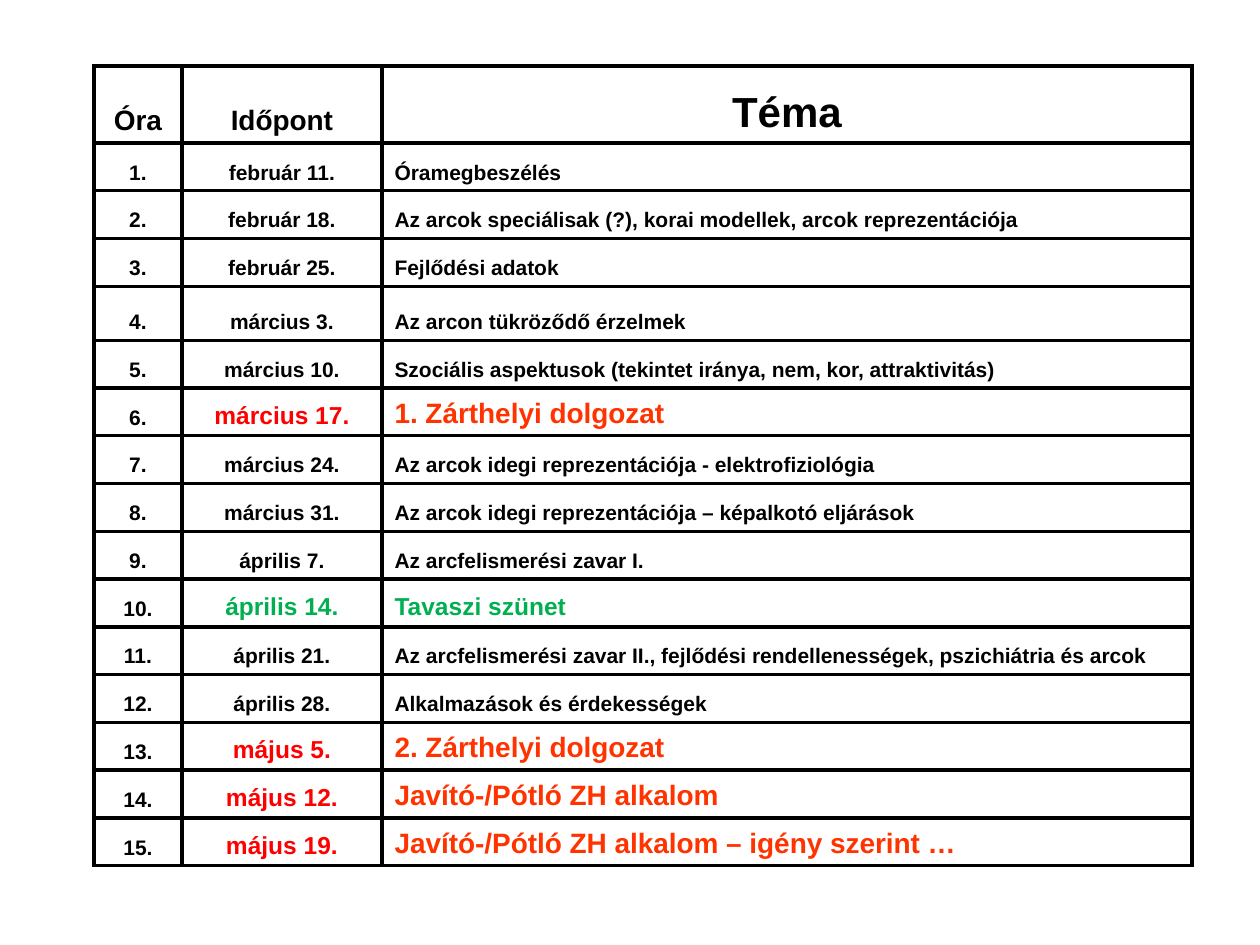
from dataclasses import dataclass

from lxml import etree
from pptx import Presentation
from pptx.dml.color import RGBColor
from pptx.enum.text import MSO_ANCHOR, PP_ALIGN
from pptx.oxml.ns import qn
from pptx.util import Pt

BOTTOM = MSO_ANCHOR.BOTTOM
CENTER, LEFT = PP_ALIGN.CENTER, PP_ALIGN.LEFT
PX_PER_INCH = 126


@dataclass(frozen=True)
class Theme:
    font: str = "Arial"
    ink: str = "000000"
    exam_date: str = "FF0000"
    exam_topic: str = "FF3300"
    holiday: str = "00B050"
    body: int = 12
    marked: int = 14
    large: int = 16
    topic_head: int = 24
    border: float = 2.25


THEME = Theme()


def px(value):
    return round(value * 914400 / PX_PER_INCH)


def add_borders(cell):
    properties = cell._tc.get_or_add_tcPr()
    for position, side in enumerate(("lnL", "lnR", "lnT", "lnB")):
        line = etree.Element(qn(f"a:{side}"), w=str(Pt(THEME.border)))
        fill = etree.SubElement(line, qn("a:solidFill"))
        etree.SubElement(fill, qn("a:srgbClr"), val=THEME.ink)
        properties.insert(position, line)


# Text styles: (size, colour) for number, date and topic
number_style = (THEME.body, THEME.ink)
head_style = (THEME.large, THEME.ink)
STYLES = {
    "head": (head_style, head_style, (THEME.topic_head, THEME.ink)),
    "class": (number_style, number_style, number_style),
    "exam": (number_style, (THEME.marked, THEME.exam_date), (THEME.large, THEME.exam_topic)),
    "holiday": (number_style, (THEME.marked, THEME.holiday), (THEME.marked, THEME.holiday)),
}

# Course schedule
sessions = [
    ("class", "február 11.", "Óramegbeszélés"),
    ("class", "február 18.", "Az arcok speciálisak (?), korai modellek, arcok reprezentációja"),
    ("class", "február 25.", "Fejlődési adatok"),
    ("class", "március 3.", "Az arcon tükröződő érzelmek"),
    ("class", "március 10.", "Szociális aspektusok (tekintet iránya, nem, kor, attraktivitás)"),
    ("exam", "március 17.", "1. Zárthelyi dolgozat"),
    ("class", "március 24.", "Az arcok idegi reprezentációja - elektrofiziológia"),
    ("class", "március 31.", "Az arcok idegi reprezentációja – képalkotó eljárások"),
    ("class", "április 7.", "Az arcfelismerési zavar I."),
    ("holiday", "április 14.", "Tavaszi szünet"),
    ("class", "április 21.",
     "Az arcfelismerési zavar II., fejlődési rendellenességek, pszichiátria és arcok"),
    ("class", "április 28.", "Alkalmazások és érdekességek"),
    ("exam", "május 5.", "2. Zárthelyi dolgozat"),
    ("exam", "május 12.", "Javító-/Pótló ZH alkalom"),
    ("exam", "május 19.", "Javító-/Pótló ZH alkalom – igény szerint …"),
]
schedule = [("head", "Óra", "Időpont", "Téma")]
for number, (kind, date, topic) in enumerate(sessions, start=1):
    schedule.append((kind, f"{number}.", date, topic))

# Slide
presentation = Presentation()
presentation.slide_width = px(1260)
presentation.slide_height = px(945)
slide = presentation.slides.add_slide(presentation.slide_layouts[6])

# Table grid: the head row and the fourth session are taller, the rest share evenly
column_widths = (88, 200, 810)
table_height = 800
tall_rows = {0: 77, 4: 54}
row_height = (table_height - sum(tall_rows.values())) / (len(schedule) - len(tall_rows))

timetable = slide.shapes.add_table(
    len(schedule), len(column_widths),
    px(94), px(66), px(sum(column_widths)), px(table_height),
).table
timetable.first_row = False
timetable.horz_banding = False
for column, width in zip(timetable.columns, column_widths):
    column.width = px(width)

# Table cells
hanging = px(48)
for row_index, (kind, *texts) in enumerate(schedule):
    timetable.rows[row_index].height = px(tall_rows.get(row_index, row_height))
    for column_index, (text, (size, color)) in enumerate(zip(texts, STYLES[kind])):
        cell = timetable.cell(row_index, column_index)
        cell.vertical_anchor = BOTTOM
        cell.fill.background()
        add_borders(cell)

        paragraph = cell.text_frame.paragraphs[0]
        is_topic = column_index == 2 and kind != "head"
        paragraph.alignment = LEFT if is_topic else CENTER
        indents = paragraph._p.get_or_add_pPr()
        indents.set("marL", str(hanging))
        indents.set("indent", str(-hanging))

        run = paragraph.add_run()
        run.text = text
        run.font.name = THEME.font
        run.font.size = Pt(size)
        run.font.bold = True
        run.font.color.rgb = RGBColor.from_string(color)

presentation.save("out.pptx")
